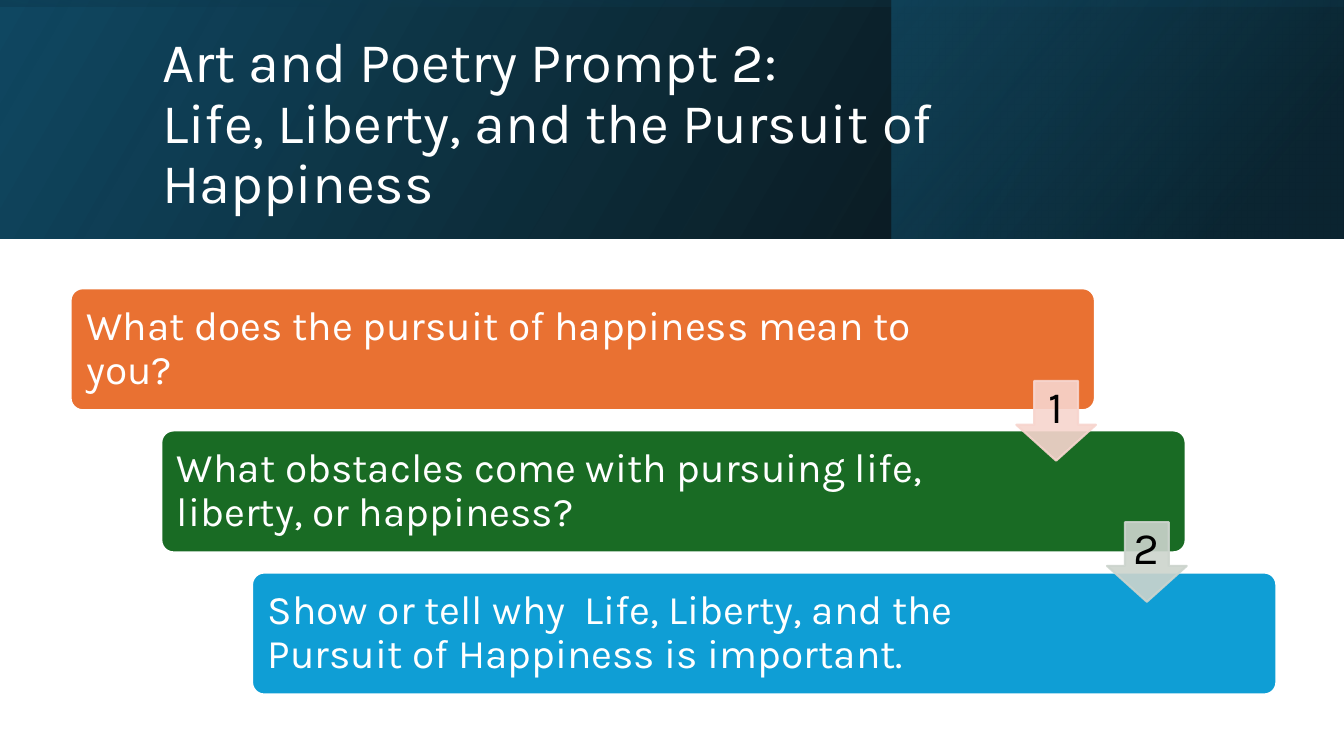
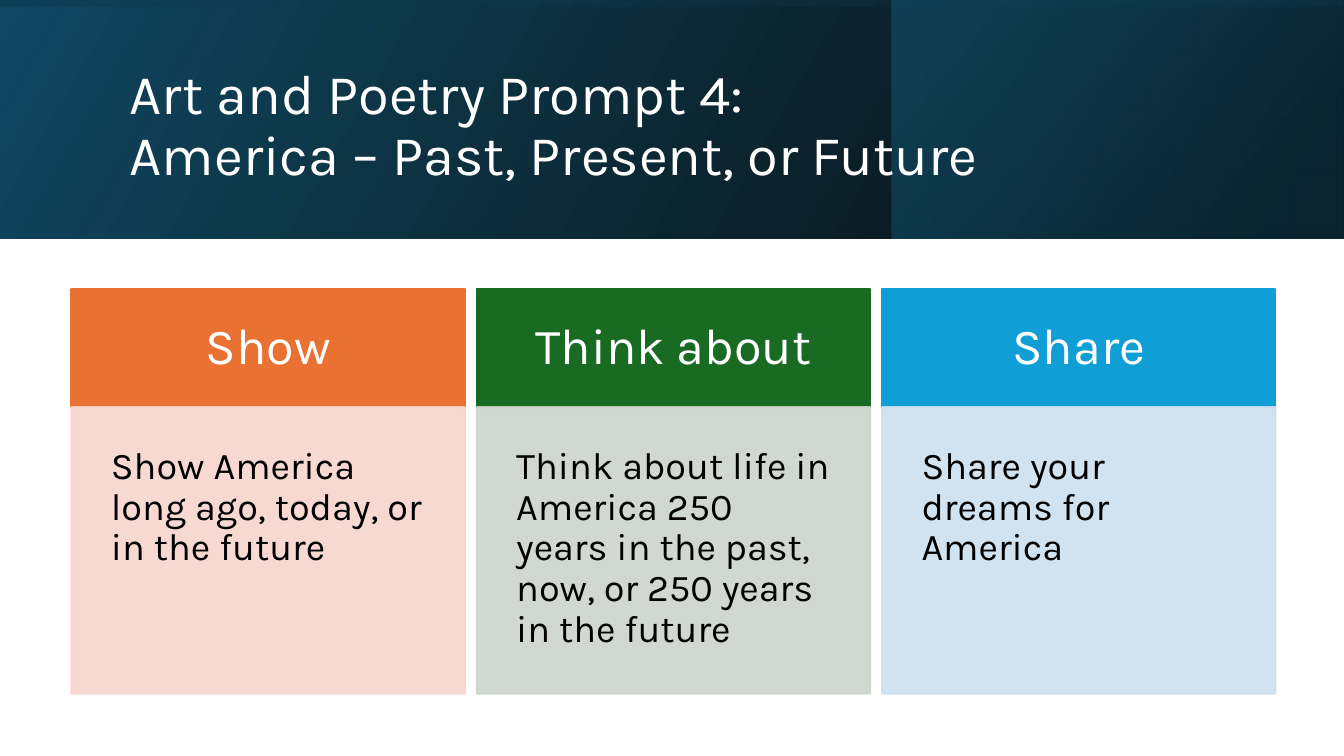
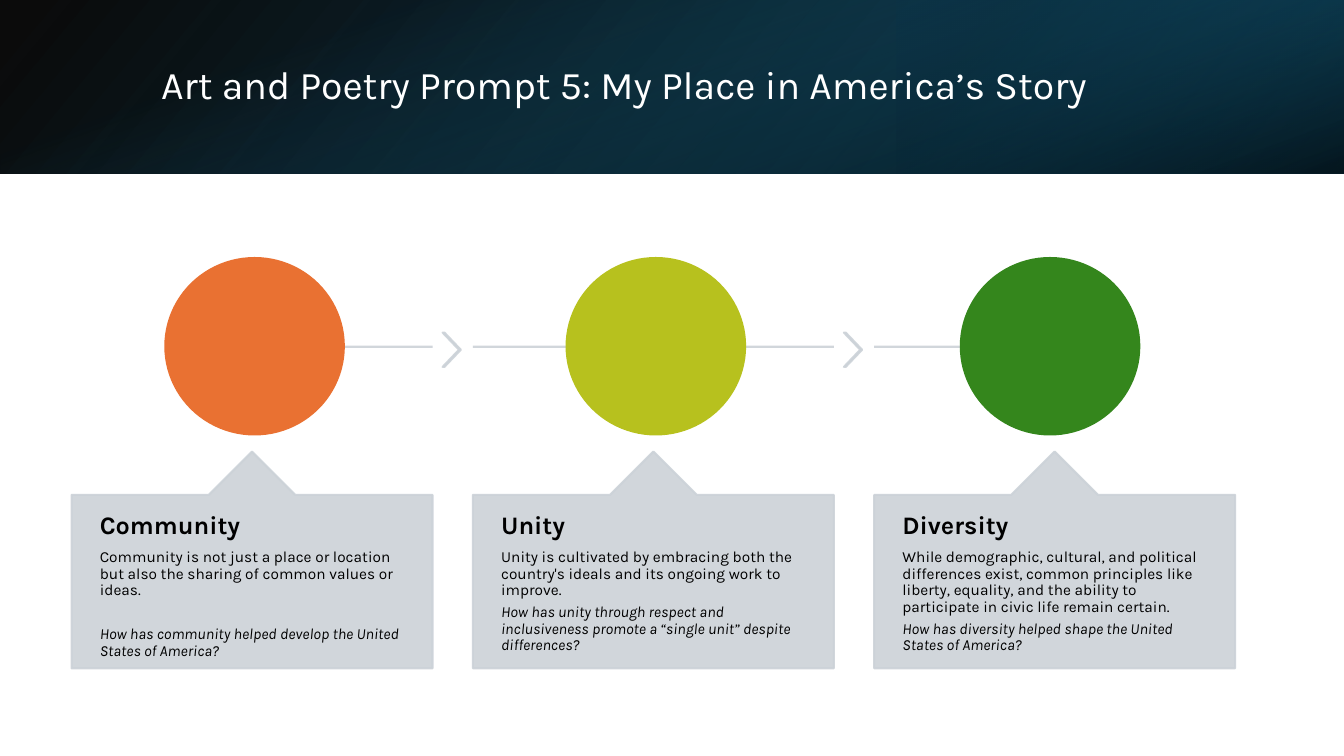
"""Build three art and poetry prompt slides."""
from dataclasses import dataclass

from pptx import Presentation
from pptx.dml.color import RGBColor
from pptx.enum.shapes import MSO_CONNECTOR, MSO_SHAPE
from pptx.enum.text import MSO_ANCHOR, PP_ALIGN
from pptx.oxml.ns import qn
from pptx.shapes.autoshape import Shape
from pptx.slide import Slide
from pptx.util import Inches, Pt
from lxml.etree import SubElement


@dataclass(frozen=True)
class Theme:
    """Colours, font and type sizes of the deck."""
    font: str = "Karla"
    white: str = "FFFFFF"
    black: str = "000000"
    navy: str = "104862"
    deep: str = "0B3041"
    teal: str = "156082"
    orange: str = "E97132"
    green: str = "196B24"
    blue: str = "0F9ED5"
    lime: str = "B7C11E"
    leaf: str = "34861C"
    pale_orange: str = "F7D5CE"
    pale_green: str = "CCD4CD"
    pale_blue: str = "CCDFEF"
    grey: str = "CCD2D8"
    title: int = 40
    small_title: int = 28
    heading: int = 36
    number: int = 32
    question: int = 29
    body: int = 27
    topic: int = 18
    note: int = 11
    line: float = 1.5
    pale_alpha: int = 90


THEME = Theme()
SLIDE_WIDTH = 13.33


@dataclass(frozen=True)
class Box:
    """A frame in inches."""
    left: float
    top: float
    width: float
    height: float


@dataclass(frozen=True)
class Stop:
    """A gradient stop with its opacity in percent."""
    position: int
    color: str
    alpha: int


@dataclass(frozen=True)
class Layer:
    """A gradient rectangle of a title band."""
    box: Box
    stops: tuple[Stop, Stop]
    angle: int
    flipped: bool = True
    rotation: int = 0


@dataclass(frozen=True)
class Text:
    """A paragraph in one style."""
    words: str
    size: int
    color: str = THEME.black
    bold: bool = False
    italic: bool = False
    centred: bool = False
    gap: float = 0.35


@dataclass(frozen=True)
class Step:
    """A question bar on the staircase."""
    question: str
    color: str
    right_inset: float


@dataclass(frozen=True)
class Column:
    """A heading with its body panel."""
    heading: str
    body: str
    color: str
    pale: str


@dataclass(frozen=True)
class Topic:
    """A circle, its connecting line and its callout."""
    name: str
    statement: str
    question: str
    color: str
    circle_left: float
    line_start: float
    line_end: float
    gap: float = 0.35


def set_alpha(shape: Shape, alphas: tuple[int, ...]) -> None:
    """Set the opacity of a shape's colours, in order."""
    colors = shape._element.spPr.iter(qn("a:srgbClr"))
    for color, alpha in zip(colors, alphas):
        SubElement(color, qn("a:alpha")).set("val", str(alpha * 1000))


def add_block(page: Slide, kind: MSO_SHAPE, box: Box, color: str, outline: str,
              adjustments: tuple[float, ...] = (), alpha: int = 100) -> Shape:
    """Add a filled and outlined preset shape."""
    shape = page.shapes.add_shape(
        kind, Inches(box.left), Inches(box.top), Inches(box.width), Inches(box.height))
    shape.shadow.inherit = False
    shape.fill.solid()
    shape.fill.fore_color.rgb = RGBColor.from_string(color)
    shape.line.color.rgb = RGBColor.from_string(outline)
    shape.line.width = Pt(THEME.line)
    for index, value in enumerate(adjustments):
        shape.adjustments[index] = value
    if alpha < 100:
        set_alpha(shape, (alpha, alpha))
    return shape


def add_pale(page: Slide, kind: MSO_SHAPE, box: Box, color: str,
             adjustments: tuple[float, ...] = ()) -> Shape:
    """Add a slightly transparent shape of one colour."""
    return add_block(page, kind, box, color, color, adjustments, THEME.pale_alpha)


def write(shape: Shape, texts: list[Text], anchor: MSO_ANCHOR,
          insets: tuple[float, float, float, float]) -> None:
    """Write paragraphs into a shape with left, top, right and bottom insets."""
    frame = shape.text_frame
    frame.word_wrap = True
    frame.vertical_anchor = anchor
    (frame.margin_left, frame.margin_top,
     frame.margin_right, frame.margin_bottom) = map(Inches, insets)
    for index, text in enumerate(texts):
        para = frame.add_paragraph() if index else frame.paragraphs[0]
        para.alignment = PP_ALIGN.CENTER if text.centred else PP_ALIGN.LEFT
        para.line_spacing = 0.9
        para.space_after = Pt(round(text.size * text.gap, 1))
        for number, line in enumerate(text.words.split("\n")):
            if number:
                para.add_line_break()
            span = para.add_run()
            span.text = line
            span.font.name = THEME.font
            span.font.size = Pt(text.size)
            span.font.bold = text.bold
            span.font.italic = text.italic
            span.font.color.rgb = RGBColor.from_string(text.color)


def add_layer(page: Slide, layer: Layer) -> None:
    """Add one gradient rectangle of a title band."""
    box = layer.box
    shape = page.shapes.add_shape(
        MSO_SHAPE.RECTANGLE, Inches(box.left), Inches(box.top),
        Inches(box.width), Inches(box.height))
    shape.shadow.inherit = False
    shape.line.fill.background()
    shape.fill.gradient()
    shape.fill.gradient_angle = 360 - layer.angle
    for target, stop in zip(shape.fill.gradient_stops, layer.stops):
        target.position = stop.position / 100
        target.color.rgb = RGBColor.from_string(stop.color)
    set_alpha(shape, tuple(stop.alpha for stop in layer.stops))
    shape.rotation = layer.rotation
    if layer.flipped:
        shape._element.spPr.find(qn("a:xfrm")).set("flipH", "1")


def upright(height: float) -> Box:
    """Give the frame that covers a band of this height after a quarter turn."""
    offset = (SLIDE_WIDTH - height) / 2
    return Box(offset, -offset, height, SLIDE_WIDTH)


BASE_STOPS = (Stop(0, THEME.black, 96), Stop(100, THEME.navy, 100))
TALL_BAND = (
    Layer(Box(0, 0, SLIDE_WIDTH, 2.37), BASE_STOPS, 330),
    Layer(Box(8.84, 0, 4.48, 2.37),
          (Stop(19, THEME.deep, 68), Stop(100, THEME.teal, 48)), 320),
    Layer(upright(2.37), (Stop(23, THEME.navy, 16), Stop(99, THEME.black, 45)),
          350, rotation=270),
)
SHORT_BAND = (
    Layer(Box(0, 0, SLIDE_WIDTH, 1.72), BASE_STOPS, 140),
    Layer(Box(8.89, 0, 4.44, 1.72),
          (Stop(19, THEME.deep, 68), Stop(100, THEME.teal, 79)), 320, rotation=180),
    Layer(upright(1.72), (Stop(23, THEME.teal, 0), Stop(99, THEME.black, 74)),
          340, flipped=False, rotation=90),
)

STEPS = (
    Step("What does the pursuit of happiness mean to you?", THEME.orange, 1.35),
    Step("What obstacles come with pursuing life, liberty, or happiness?",
         THEME.green, 1.8),
    Step("Show or tell why  Life, Liberty, and the Pursuit of Happiness is important.",
         THEME.blue, 1.8),
)
COLUMNS = (
    Column("Show", "Show America long ago, today, or in the future",
           THEME.orange, THEME.pale_orange),
    Column("Think about",
           "Think about life in America 250 years in the past, now, "
           "or 250 years in the future", THEME.green, THEME.pale_green),
    Column("Share", "Share your dreams for America", THEME.blue, THEME.pale_blue),
)
TOPICS = (
    Topic("Community",
          "Community is not just a place or location but also the sharing of "
          "common values or ideas.",
          "How has community helped develop the United States of America?",
          THEME.orange, 1.64, 2.7, 4.29, 1.77),
    Topic("Unity",
          "Unity is cultivated by embracing both the country's ideals and its "
          "ongoing work to improve.",
          "How has unity through respect and inclusiveness promote a “single unit” "
          "despite differences?", THEME.lime, 5.62, 4.69, 8.27),
    Topic("Diversity",
          "While demographic, cultural, and political differences exist, common "
          "principles like liberty, equality, and the ability to participate in "
          "civic life remain certain.",
          "How has diversity helped shape the United States of America?",
          THEME.leaf, 9.53, 8.67, 10.46),
)


def add_page(deck: Presentation, band: tuple[Layer, ...], box: Box,
             title: str, size: int) -> Slide:
    """Add a blank page with its band and title."""
    page = deck.slides.add_slide(deck.slide_layouts[6])
    for layer in band:
        add_layer(page, layer)
    frame = page.shapes.add_textbox(
        Inches(box.left), Inches(box.top), Inches(box.width), Inches(box.height))
    write(frame, [Text(title, size, THEME.white, gap=0)],
          MSO_ANCHOR.MIDDLE, (0.1, 0.05, 0.1, 0.05))
    return page


def draw_steps(page: Slide) -> None:
    """Draw the staircase of questions and its numbered arrows."""
    for index, step in enumerate(STEPS):
        bar = add_block(page, MSO_SHAPE.ROUNDED_RECTANGLE,
                        Box(0.7 + 0.9 * index, 2.86 + 1.41 * index, 10.16, 1.21),
                        step.color, THEME.white, (0.1,))
        write(bar, [Text(step.question, THEME.question, THEME.white)],
              MSO_ANCHOR.MIDDLE, (0.12, 0.12, step.right_inset, 0.12))
    for index, color in enumerate((THEME.pale_orange, THEME.pale_green)):
        arrow = add_pale(page, MSO_SHAPE.DOWN_ARROW,
                         Box(10.08 + 0.9 * index, 3.78 + 1.4 * index, 0.79, 0.79),
                         color, (0.55, 0.45))
        write(arrow, [Text(str(index + 1), THEME.number, centred=True)],
              MSO_ANCHOR.MIDDLE, (0.04, 0.04, 0.04, 0.08))


def draw_columns(page: Slide) -> None:
    """Draw the headed panels side by side."""
    for index, column in enumerate(COLUMNS):
        left = 0.71 + 4.02 * index
        header = add_block(page, MSO_SHAPE.RECTANGLE, Box(left, 2.87, 3.9, 1.17),
                           column.color, column.color)
        write(header, [Text(column.heading, THEME.heading, THEME.white, centred=True)],
              MSO_ANCHOR.MIDDLE, (0.31,) * 4)
        panel = add_pale(page, MSO_SHAPE.RECTANGLE, Box(left, 4.04, 3.9, 2.84),
                         column.pale)
        write(panel, [Text(column.body, THEME.body)], MSO_ANCHOR.TOP, (0.39,) * 4)


def draw_topics(page: Slide) -> None:
    """Draw the linked circles and the callouts below them."""
    for index, topic in enumerate(TOPICS):
        left = 0.71 + 3.98 * index
        line = page.shapes.add_connector(
            MSO_CONNECTOR.STRAIGHT, Inches(topic.line_start), Inches(3.44),
            Inches(topic.line_end), Inches(3.44))
        line.line.color.rgb = RGBColor.from_string(THEME.grey)
        line.line.width = Pt(THEME.line)
        set_alpha(line, (THEME.pale_alpha,))
        SubElement(line._element.spPr, qn("a:effectLst"))
        if index < len(TOPICS) - 1:
            add_pale(page, MSO_SHAPE.CHEVRON, Box(left + 3.68, 3.3, 0.18, 0.34),
                     THEME.grey, (0.9,))
        add_block(page, MSO_SHAPE.OVAL, Box(topic.circle_left, 2.56, 1.77, 1.75),
                  topic.color, topic.color)
        callout = add_pale(page, MSO_SHAPE.UP_ARROW_CALLOUT,
                           Box(left, 4.48, 3.58, 2.15), THEME.grey, (0.5, 0.2, 0.2, 1))
        write(callout, [Text(topic.name, THEME.topic, bold=True),
                        Text(topic.statement, THEME.note, gap=topic.gap),
                        Text(topic.question, THEME.note, italic=True)],
              MSO_ANCHOR.TOP, (0.28, 0.18, 0.28, 0.18))


def main() -> None:
    """Build and save the deck."""
    deck = Presentation()
    deck.slide_width = Inches(SLIDE_WIDTH)
    deck.slide_height = Inches(7.5)
    draw_steps(add_page(
        deck, TALL_BAND, Box(1.51, 0.38, 10.63, 1.72),
        "Art and Poetry Prompt 2: \nLife, Liberty, and the Pursuit of Happiness",
        THEME.title))
    draw_columns(add_page(
        deck, TALL_BAND, Box(1.19, 0.4, 11.37, 1.72),
        "Art and Poetry Prompt 4: \nAmerica – Past, Present, or Future", THEME.title))
    draw_topics(add_page(
        deck, SHORT_BAND, Box(1.5, 0.38, 10.98, 0.96),
        "Art and Poetry Prompt 5: My Place in America’s Story", THEME.small_title))
    deck.save("out.pptx")


if __name__ == "__main__":
    main()
